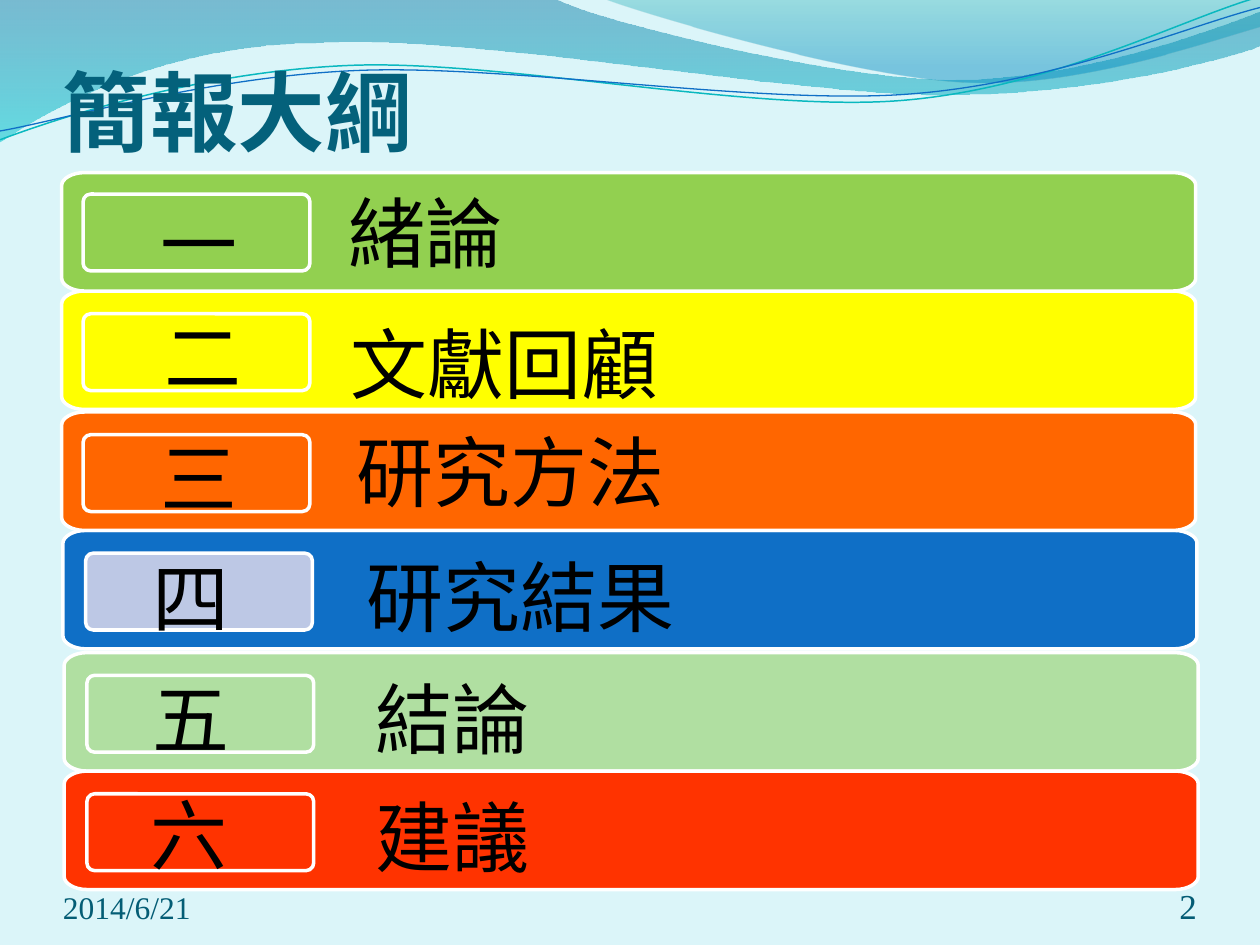
import math
import pptx
import pptx.util
import pptx.dml.color
import pptx.enum.shapes
import pptx.enum.text
import pptx.oxml
import pptx.oxml.ns
from lxml import etree

Inches = pptx.util.Inches
Pt = pptx.util.Pt
RGBColor = pptx.dml.color.RGBColor
ALIGN = pptx.enum.text.PP_ALIGN
ANCHOR = pptx.enum.text.MSO_ANCHOR
FIT = pptx.enum.text.MSO_AUTO_SIZE.SHAPE_TO_FIT_TEXT
qn = pptx.oxml.ns.qn

PALE = RGBColor(0xDB, 0xF5, 0xF9)
WHITE = RGBColor(0xFF, 0xFF, 0xFF)
BLACK = RGBColor(0, 0, 0)
TITLE = RGBColor(0x04, 0x61, 0x7B)
DATE = RGBColor(0x04, 0x5D, 0x75)
PAGE = RGBColor(0x04, 0x5C, 0x75)
DEEP = RGBColor(0x00, 0x74, 0xA1)
AQUA = RGBColor(0x00, 0xC6, 0xCF)
TEAL = RGBColor(0x00, 0xA1, 0xA9)
SKY = RGBColor(0x00, 0x8B, 0xBF)
CYAN = RGBColor(0x0A, 0xB8, 0xBF)
BLUE = RGBColor(0x0F, 0x6F, 0xC6)
LILAC = RGBColor(0xBD, 0xC8, 0xE5)
MINT = RGBColor(0xB0, 0xDF, 0xA1)
ORANGE = RGBColor(0xFF, 0x66, 0x00)
YELLOW = RGBColor(0xFF, 0xFF, 0x00)
GREEN = RGBColor(0x92, 0xD0, 0x50)
RED = RGBColor(0xFF, 0x33, 0x00)
CJK = "Noto Sans CJK SC"
ROMAN = "Times New Roman"

deck = pptx.Presentation()
deck.slide_width = Inches(10)
deck.slide_height = Inches(7.5)
slide = deck.slides.add_slide(deck.slide_layouts[6])
slide.background.fill.solid()
slide.background.fill.fore_color.rgb = PALE
shapes = slide.shapes


def add_curve(start, steps, close=True):
    pen = shapes.build_freeform(Inches(start[0]), Inches(start[1]))
    pen.add_line_segments([(Inches(s[-2]), Inches(s[-1])) for s in steps], close=close)
    form = pen.convert_to_shape()
    form.shadow.inherit = False
    lines = list(form._element.iter(qn("a:lnTo")))
    for line, step in zip(lines, steps):
        if len(step) == 6:
            bend = etree.Element(qn("a:cubicBezTo"))
            for x, y in zip(step[::2], step[1::2]):
                dot = etree.SubElement(bend, qn("a:pt"))
                dot.set("x", str(Inches(x) - form.left))
                dot.set("y", str(Inches(y) - form.top))
            line.getparent().replace(line, bend)
    return form


def add_text(text, box, size, color, face, align=ALIGN.LEFT, anchor=None, wrap=True):
    frame = shapes.add_textbox(*map(Inches, box)).text_frame
    frame.word_wrap = wrap
    if anchor is None:
        frame.auto_size = FIT
    else:
        frame.vertical_anchor = anchor
        frame.margin_left = frame.margin_right = 0
        frame.margin_top = frame.margin_bottom = 0
    para = frame.paragraphs[0]
    para.text = text
    para.alignment = align
    para.font.size = Pt(size)
    para.font.color.rgb = color
    para.font.name = face
    if face == CJK:
        props = para._p.pPr.find(qn("a:defRPr"))
        etree.SubElement(props, qn("a:ea")).set("typeface", CJK)
    return frame


waves = [
    ((0, -0.01), [
        (4.4, -0.01), (4.76, 0.17, 6.64, 0.63, 7.58, 0.63),
        (8.53, 0.63, 9.58, 0.26, 10, 0.09), (10.01, 0.36),
        (9.83, 0.44, 8.7, 0.76, 7.46, 0.75), (6.22, 0.75, 3.82, 0.28, 2.57, 0.34),
        (1.29, 0.35, 0.46, 0.83, -0.01, 1.13), (0, -0.01)],
     [(0, DEEP, 45), (1, AQUA, 55)]),
    ((4.79, -0.01), [
        (5.09, 0.11, 6.82, 0.62, 7.69, 0.65), (8.56, 0.69, 9.61, 0.32, 10, 0.21),
        (10, 0), (4.79, -0.01)],
     [(0, TEAL, 30), (0.8, SKY, 45)]),
]
for start, steps, stops in waves:
    wave = add_curve(start, steps)
    wave.line.fill.background()
    wave.fill.gradient()
    wave.fill.gradient_angle = 270
    for stop, (place, color, alpha) in zip(wave.fill.gradient_stops, stops):
        stop.position = place
        stop.color.rgb = color
    for tint, (place, color, alpha) in zip(wave._element.spPr.iter(qn("a:srgbClr")), stops):
        etree.SubElement(tint, qn("a:alpha")).set("val", str(alpha * 1000))

threads = [
    ([(0, 1.11), (0.48, 0.93, 1.58, 0.57, 2.77, 0.52), (3.95, 0.47, 5.93, 0.89, 7.13, 0.8),
      (8.33, 0.71, 9.38, 0.15, 9.98, -0.02)], 0.58, CYAN, 0.85),
    ([(0, 1.04), (0.47, 0.96, 1.64, 0.61, 2.83, 0.56), (4.03, 0.51, 5.97, 0.83, 7.17, 0.75),
      (8.36, 0.67, 9.41, 0.21, 10, 0.06)], 0.59, BLUE, 0.75),
]
cos, sin = math.cos(math.radians(2.7)), math.sin(math.radians(2.7))
pair = []
for steps, mid, color, width in threads:
    level = []
    for step in steps:
        flat = []
        for x, y in zip(step[::2], step[1::2]):
            flat += [5 + (x - 5) * cos - (y - mid) * sin,
                     mid + (x - 5) * sin + (y - mid) * cos]
        level.append(flat)
    thread = add_curve(level[0], level[1:], False)
    thread.rotation = 357.3
    thread.fill.background()
    thread.line.color.rgb = color
    thread.line.width = Pt(width)
    pair.append(thread)
shapes.add_group_shape(pair)

title = add_text("簡報大綱", (0.5, 0.23, 9, 1.25), 50, TITLE, "Calibri", anchor=ANCHOR.MIDDLE)
title.margin_top = Inches(0.05)
title.paragraphs[0].font.bold = True
add_text("2014/6/21", (0.5, 6.95, 2.33, 0.4), 18, DATE, ROMAN, anchor=ANCHOR.BOTTOM)
add_text("2", (8.67, 6.95, 0.83, 0.4), 20, PAGE, ROMAN, ALIGN.RIGHT, ANCHOR.BOTTOM)

sets = [
    [(0.5, 4.21, 0.68, 4.39, BLUE, LILAC)],
    [(0.51, 5.18, 0.69, 5.36, MINT, MINT),
     (0.49, 3.27, 0.66, 3.45, ORANGE, ORANGE),
     (0.49, 2.31, 0.66, 2.49, YELLOW, YELLOW),
     (0.49, 1.37, 0.66, 1.54, GREEN, GREEN),
     (0.51, 6.12, 0.69, 6.3, RED, RED)],
]
for bars in sets:
    parts = []
    for x, y, left, top, color, tint in bars:
        r, b = x + 9, y + 0.94
        bar = add_curve((x, y + 0.1), [
            (x, y + 0.05, x + 0.08, y, x + 0.18, y), (r - 0.18, y),
            (r - 0.08, y, r, y + 0.05, r, y + 0.1), (r, b - 0.1),
            (r, b - 0.05, r - 0.08, b, r - 0.18, b), (x + 0.18, b),
            (x + 0.08, b, x, b - 0.05, x, b - 0.1), (x, y + 0.1)])
        badge = shapes.add_shape(
            pptx.enum.shapes.MSO_SHAPE.ROUNDED_RECTANGLE,
            Inches(left), Inches(top), Inches(1.8), Inches(0.61))
        badge.adjustments[0] = 0.1
        badge.shadow.inherit = False
        for shape, paint in ((bar, color), (badge, tint)):
            shape.fill.solid()
            shape.fill.fore_color.rgb = paint
            shape.line.color.rgb = WHITE
            shape.line.width = Pt(2)
            parts.append(shape)
    shapes.add_group_shape(parts)

marks = [("一", 0.95, 1.51), ("二", 0.98, 2.41), ("三", 0.95, 3.37),
         ("四", 0.89, 4.32), ("五", 0.89, 5.28), ("六", 0.87, 6.2)]
for text, x, y in marks:
    add_text(text, (x, y, 1.26, 0.84), 44, BLACK, ROMAN, ALIGN.CENTER)

heads = [("緒論", 2.67, 1.42), ("文獻回顧", 2.67, 2.46), ("研究方法", 2.73, 3.32),
         ("研究結果", 2.81, 4.31), ("結論", 2.88, 5.28), ("建議", 2.88, 6.22)]
for text, x, y in heads:
    width = 1.44 if len(text) == 2 else 2.67
    align = ALIGN.CENTER if text == "文獻回顧" else ALIGN.LEFT
    add_text(text, (x, y, width, 0.84), 44, BLACK, CJK, align, wrap=False)

deck.save("out.pptx")
